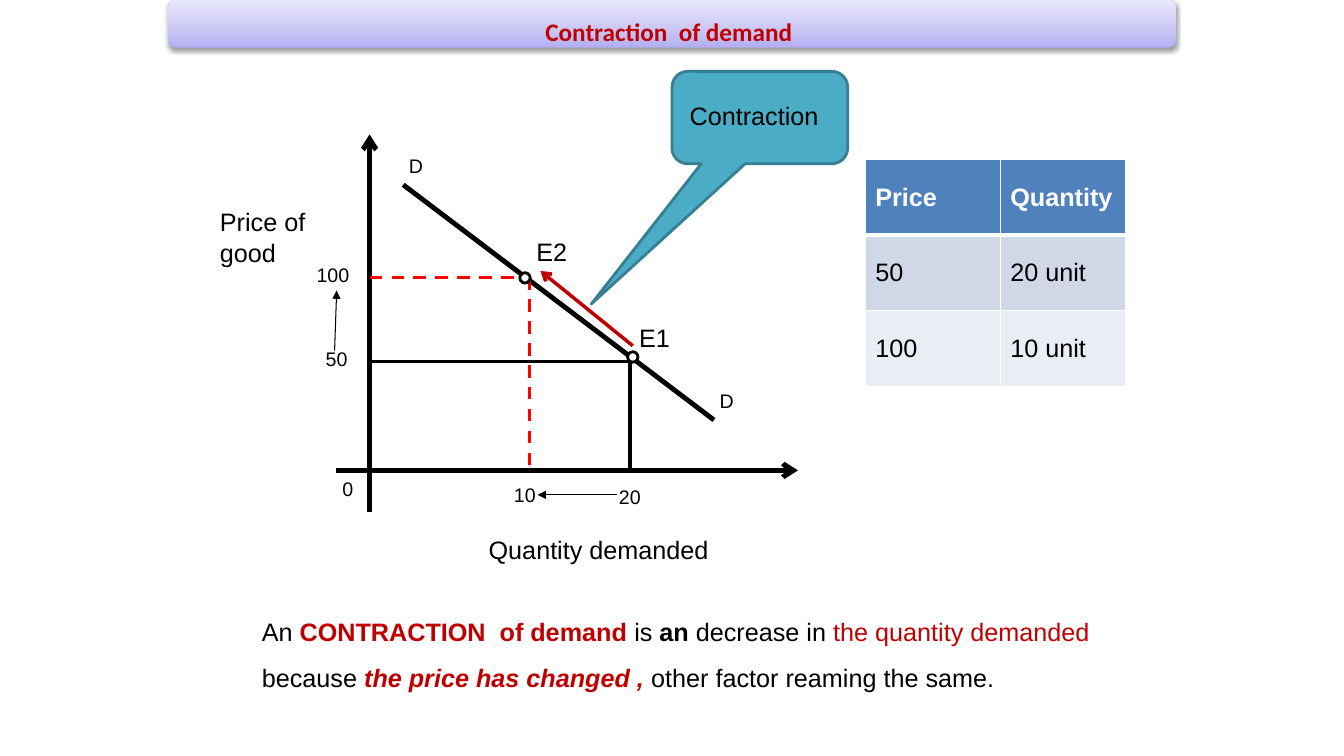
from lxml import etree
from pptx import Presentation
from pptx.dml.color import RGBColor
from pptx.enum import dml, shapes, text
from pptx.oxml import ns
from pptx.util import Pt

BLACK = RGBColor(0x00, 0x00, 0x00)
WHITE = RGBColor(0xFF, 0xFF, 0xFF)
CRIMSON = RGBColor(0xC0, 0x00, 0x00)
RED = RGBColor(0xFF, 0x00, 0x00)
TEAL = RGBColor(0x4B, 0xAC, 0xC6)
DARK_TEAL = RGBColor(0x37, 0x7F, 0x92)
ROW_FILLS = [RGBColor(0x4F, 0x81, 0xBD), RGBColor(0xD0, 0xD8, 0xE8), RGBColor(0xE9, 0xED, 0xF4)]
BANNER_STOPS = [(0, "B2AEF2"), (35, "C9C6F5"), (100, "E9E8FC")]

# Runs: wording, colour, styles (b bold, i italic)
TITLE = [("Contraction  of demand ", CRIMSON, "b")]
DEFINITION = [
    ("An ", BLACK, ""),
    ("CONTRACTION  of demand ", CRIMSON, "b"),
    ("is ", BLACK, ""),
    ("an", BLACK, "b"),
    (" decrease in ", BLACK, ""),
    ("the quantity demanded ", CRIMSON, ""),
    ("because ", BLACK, ""),
    ("the price has changed , ", CRIMSON, "bi"),
    ("other factor reaming the same.", BLACK, ""),
]
SCHEDULE = [("Price", "Quantity"), ("50", "20 unit"), ("100", "10 unit")]
COLUMN_WIDTHS = [96.5, 89.3]
ROW_HEIGHT = 54

# Labels: wording, left, top, width, height, size
LABELS = [
    ("Quantity demanded", 342, 378, 174, 29, 18),
    ("Price of good", 150, 144, 120, 51, 18),
    ("100", 219, 184.5, 48, 24, 14),
    ("50", 225.5, 244.5, 48, 24, 14),
    ("10", 360, 341.5, 54, 24, 14),
    ("20", 435, 343, 54, 24, 14),
    ("0", 237.5, 337, 48, 24, 14),
    ("E1", 449.5, 227, 48, 29, 18),
    ("E2", 376, 165.5, 48, 29, 18),
    ("D", 285, 106.5, 24, 24, 14),
    ("D", 507, 274.5, 24, 24, 14),
]

# Graph positions
AXIS_X, AXIS_Y = 264, 336
PRICE_50, PRICE_100 = 258, 198
QUANTITY_10, QUANTITY_20 = 378, 450

# Lines: start, end, colour, width, arrowhead, dashed
LINES = [
    ((452, 247), (386, 193.5), CRIMSON, 2.5, "arrow", False),
    ((AXIS_X, 366), (AXIS_X, 96), BLACK, 3.5, "arrow", False),
    ((240, AXIS_Y), (570, AXIS_Y), BLACK, 3.5, "arrow", False),
    ((288, 132), (510, 300), BLACK, 3.5, None, False),
    ((AXIS_X, PRICE_100), (QUANTITY_10, PRICE_100), RED, 2.25, None, True),
    ((QUANTITY_10, PRICE_100), (QUANTITY_10, AXIS_Y), RED, 2.25, None, True),
    ((AXIS_X, PRICE_50), (QUANTITY_20, PRICE_50), BLACK, 2.25, None, False),
    ((QUANTITY_20, PRICE_50), (QUANTITY_20, AXIS_Y), BLACK, 2.25, None, False),
    ((441, 353.5), (384, 353.5), BLACK, 0.75, "triangle", False),
    ((239, 250.5), (240.5, 207.5), BLACK, 0.75, "triangle", False),
]
EQUILIBRIA = [(452, 255), (375, 198.5)]
DOT = 7.4

prs = Presentation()
prs.slide_width, prs.slide_height = Pt(960), Pt(540)
slide = prs.slides.add_slide(prs.slide_layouts[6])


def box(*lengths):
    return [Pt(length) for length in lengths]


def xml(body):
    return etree.fromstring(body.replace(">", f' {ns.nsdecls("a")}>', 1))


def add_runs(paragraph, runs, size=18, font="Arial"):
    for wording, color, styles in runs:
        run = paragraph.add_run()
        run.text = wording
        run.font.size, run.font.name = Pt(size), font
        run.font.color.rgb = color
        run.font.bold, run.font.italic = "b" in styles, "i" in styles


def add_text(runs, place, size=18, font="Arial", spacing=None):
    frame = slide.shapes.add_textbox(*box(*place)).text_frame
    frame.word_wrap = True
    paragraph = frame.paragraphs[0]
    paragraph.line_spacing = spacing
    add_runs(paragraph, runs, size, font)
    return frame


def add_shape(kind, place, fill, outline):
    shape = slide.shapes.add_shape(kind, *box(*place))
    shape.shadow.inherit = False
    shape.fill.solid()
    shape.fill.fore_color.rgb = fill
    shape.line.color.rgb = outline
    shape.line.width = Pt(2)
    return shape


def add_line(start, end, color, width, head, dashed):
    line = slide.shapes.add_connector(shapes.MSO_CONNECTOR.STRAIGHT, *box(*start, *end))
    line.line.color.rgb = color
    line.line.width = Pt(width)
    if dashed:
        line.line.dash_style = dml.MSO_LINE.DASH
    if head:
        line.line._get_or_add_ln().append(xml(f'<a:tailEnd type="{head}"></a:tailEnd>'))
    line._element.spPr.append(xml("<a:effectLst></a:effectLst>"))


def add_banner():
    banner = slide.shapes.add_shape(shapes.MSO_SHAPE.ROUNDED_RECTANGLE, *box(120, 0, 720, 34))
    banner.line.fill.background()
    stops = "".join(f'<a:gs pos="{at * 1000}"><a:srgbClr val="{color}"/></a:gs>'
                    for at, color in BANNER_STOPS)
    props = banner._element.spPr
    props.find(ns.qn("a:prstGeom")).addnext(xml(
        f'<a:gradFill rotWithShape="1"><a:gsLst>{stops}</a:gsLst>'
        '<a:lin ang="16200000" scaled="0"/></a:gradFill>'))
    props.append(xml(
        f'<a:effectLst><a:outerShdw blurRad="{Pt(3.1)}" dist="{Pt(1.6)}" dir="5400000" '
        'rotWithShape="0"><a:srgbClr val="000000"><a:alpha val="38000"/></a:srgbClr>'
        '</a:outerShdw></a:effectLst>'))

    frame = add_text(TITLE, (121.5, 1.5, 716.5, 31), font="Calibri", spacing=1.5)
    frame.vertical_anchor = text.MSO_ANCHOR.MIDDLE
    frame.margin_left = frame.margin_right = frame.margin_top = frame.margin_bottom = Pt(5)
    title = frame.paragraphs[0]
    title.alignment = text.PP_ALIGN.CENTER
    indents = title._p.get_or_add_pPr()
    indents.set("marL", str(Pt(36)))
    indents.set("indent", str(-Pt(36)))


def add_schedule():
    table = slide.shapes.add_table(
        len(SCHEDULE), len(COLUMN_WIDTHS),
        *box(618, 114, sum(COLUMN_WIDTHS), ROW_HEIGHT * len(SCHEDULE))).table
    table.horz_banding = False
    for column, width in zip(table.columns, COLUMN_WIDTHS):
        column.width = Pt(width)
    for r, values in enumerate(SCHEDULE):
        table.rows[r].height = Pt(ROW_HEIGHT)
        for c, value in enumerate(values):
            cell = table.cell(r, c)
            cell.vertical_anchor = text.MSO_ANCHOR.MIDDLE
            color, styles = (WHITE, "b") if r == 0 else (BLACK, "")
            add_runs(cell.text_frame.paragraphs[0], [(value, color, styles)])
            cell.fill.solid()
            cell.fill.fore_color.rgb = ROW_FILLS[r]
            # The rule under the header is thicker
            widths = {"L": 1, "R": 1, "T": 3 if r == 1 else 1, "B": 3 if r == 0 else 1}
            for order, (side, width) in enumerate(widths.items()):
                cell._tc.get_or_add_tcPr().insert(order, xml(
                    f'<a:ln{side} w="{Pt(width)}"><a:solidFill><a:srgbClr val="{WHITE}"/>'
                    f'</a:solidFill></a:ln{side}>'))


add_schedule()
add_text(DEFINITION, (180, 426, 606, 73), spacing=1.5)
add_banner()
for line in LINES:
    add_line(*line)
for wording, *place, size in LABELS:
    add_text([(wording, BLACK, "")], place, size)
for x, y in EQUILIBRIA:
    add_shape(shapes.MSO_SHAPE.OVAL, (x - DOT / 2, y - DOT / 2, DOT, DOT), WHITE, BLACK)

callout = add_shape(shapes.MSO_SHAPE.ROUNDED_RECTANGULAR_CALLOUT, (480, 51, 125.5, 66),
                    TEAL, DARK_TEAL)
for i, value in enumerate((-0.96, 2.02, 0.17)):
    callout.adjustments[i] = value
add_text([("Contraction", BLACK, "")], (485.5, 68, 120, 29))

prs.save("out.pptx")
